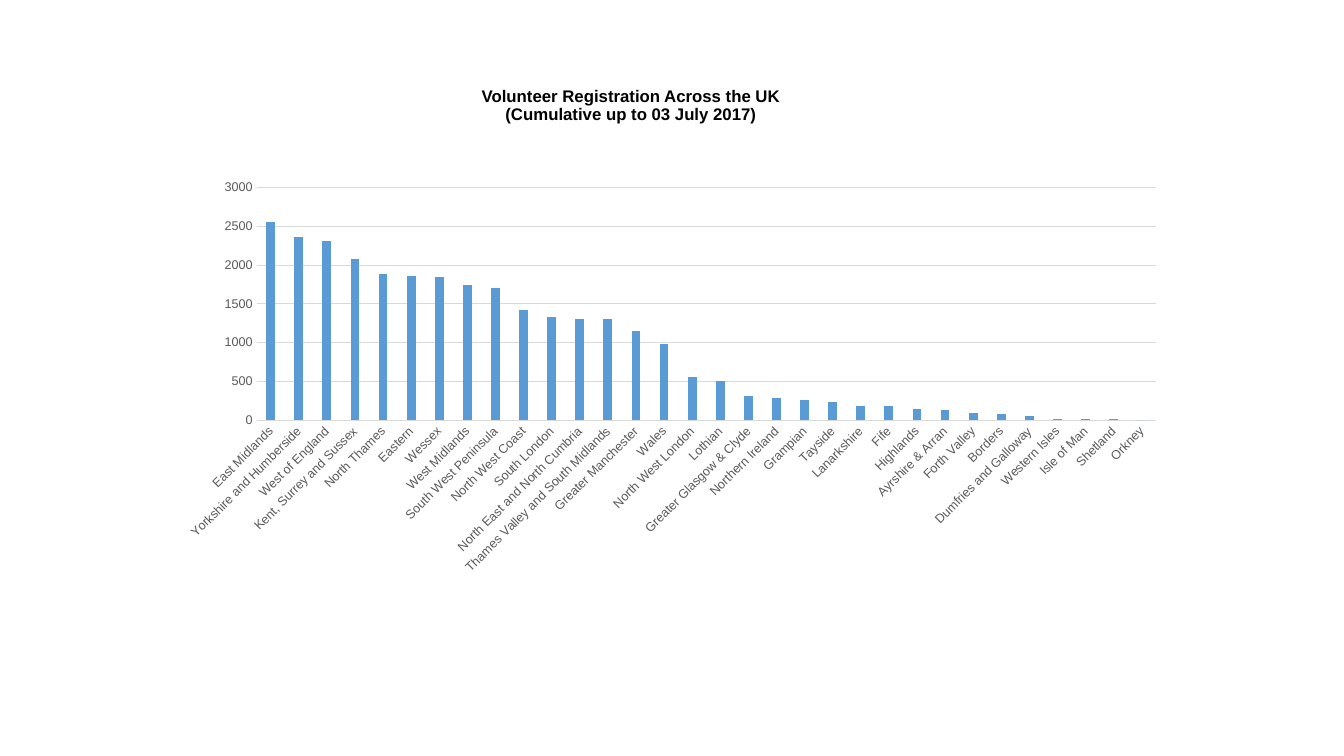
from pptx import Presentation
from pptx import util as u
from pptx.chart.data import CategoryChartData
from pptx.dml.color import RGBColor
from pptx.enum import chart as charts, text

BLACK = RGBColor(0x00, 0x00, 0x00)
GREY = RGBColor(0x59, 0x59, 0x59)
RULE = RGBColor(0xD9, 0xD9, 0xD9)
BLUE = RGBColor(0x5B, 0x9B, 0xD5)

REGISTRATIONS = {
    "East Midlands": 2560, "Yorkshire and Humberside": 2360,
    "West of England": 2310, "Kent, Surrey and Sussex": 2080,
    "North Thames": 1880, "Eastern": 1860, "Wessex": 1850,
    "West Midlands": 1740, "South West Peninsula": 1710,
    "North West Coast": 1420, "South London": 1330,
    "North East and North Cumbria": 1310,
    "Thames Valley and South Midlands": 1300, "Greater Manchester": 1150,
    "Wales": 980, "North West London": 560, "Lothian": 500,
    "Greater Glasgow & Clyde": 310, "Northern Ireland": 280,
    "Grampian": 260, "Tayside": 240, "Lanarkshire": 180, "Fife": 180,
    "Highlands": 140, "Ayrshire & Arran": 130, "Forth Valley": 90,
    "Borders": 80, "Dumfries and Galloway": 60, "Western Isles": 10,
    "Isle of Man": 10, "Shetland": 10, "Orkney": 0,
}


def px(n):
    return u.Emu(round(n * 914400 / 100.8))


def apply(target, values):
    for name, value in values.items():
        setattr(target, name, value)


class SlideBuilder:
    """Holds the font and the current slide."""

    def __init__(self, slide, font):
        self.slide = slide
        self.font = font

    def style(self, font, size, color, bold=False):
        apply(font, {"name": self.font, "size": u.Pt(size), "bold": bold})
        font.color.rgb = color

    def title(self, words, left, top, width, height, right_inset):
        heading = self.slide.shapes.title
        apply(heading, {"left": px(left), "top": px(top),
                        "width": px(width), "height": px(height)})
        apply(heading.text_frame, {
            "text": words, "word_wrap": True,
            "auto_size": text.MSO_AUTO_SIZE.NONE,
            "vertical_anchor": text.MSO_ANCHOR.MIDDLE,
            "margin_left": px(10), "margin_right": px(right_inset),
            "margin_top": px(10), "margin_bottom": px(10)})
        paragraph = heading.text_frame.paragraphs[0]
        apply(paragraph, {"alignment": text.PP_ALIGN.CENTER,
                          "line_spacing": 0.9, "space_before": u.Pt(0)})
        for run in paragraph.runs:
            self.style(run.font, 12, BLACK, bold=True)

    def column_chart(self, values, left, top, width, height):
        data = CategoryChartData()
        data.categories = list(values)
        data.add_series("Series 1", list(values.values()))
        chart = self.slide.shapes.add_chart(
            charts.XL_CHART_TYPE.COLUMN_CLUSTERED,
            px(left), px(top), px(width), px(height), data).chart
        apply(chart, {"has_title": False, "has_legend": False})
        self.style(chart.font, 10, BLACK)

        # Columns
        columns = chart.plots[0]
        apply(columns, {"gap_width": 219, "overlap": -27,
                        "vary_by_categories": False})
        fill = columns.series[0].format.fill
        fill.solid()
        fill.fore_color.rgb = BLUE

        # Axes
        regions, counts = chart.category_axis, chart.value_axis
        for axis in (regions, counts):
            apply(axis, {"major_tick_mark": charts.XL_TICK_MARK.NONE,
                         "minor_tick_mark": charts.XL_TICK_MARK.NONE})
            self.style(axis.tick_labels.font, 9, GREY)
        apply(counts, {"minimum_scale": 0, "maximum_scale": 3000,
                       "major_unit": 500, "has_major_gridlines": True})
        counts.format.line.fill.background()
        for line in (regions.format.line, counts.major_gridlines.format.line):
            line.color.rgb = RULE
            line.width = u.Pt(0.75)

        # Region names slant at 45 degrees
        label_body = regions._element.txPr.bodyPr
        label_body.set("rot", str(-45 * 60000))
        label_body.set("vert", "horz")


def main():
    deck = Presentation()
    apply(deck, {"slide_width": px(1344), "slide_height": px(756)})
    builder = SlideBuilder(deck.slides.add_slide(deck.slide_layouts[5]), "Arial")

    # Heading
    builder.title("Volunteer Registration Across the UK\v"
                  "(Cumulative up to 03 July 2017)", 93, 66, 1159, 81, 93)
    # Registrations by region
    builder.column_chart(REGISTRATIONS, 168, 172, 1008, 411)

    deck.save("out.pptx")


if __name__ == "__main__":
    main()
